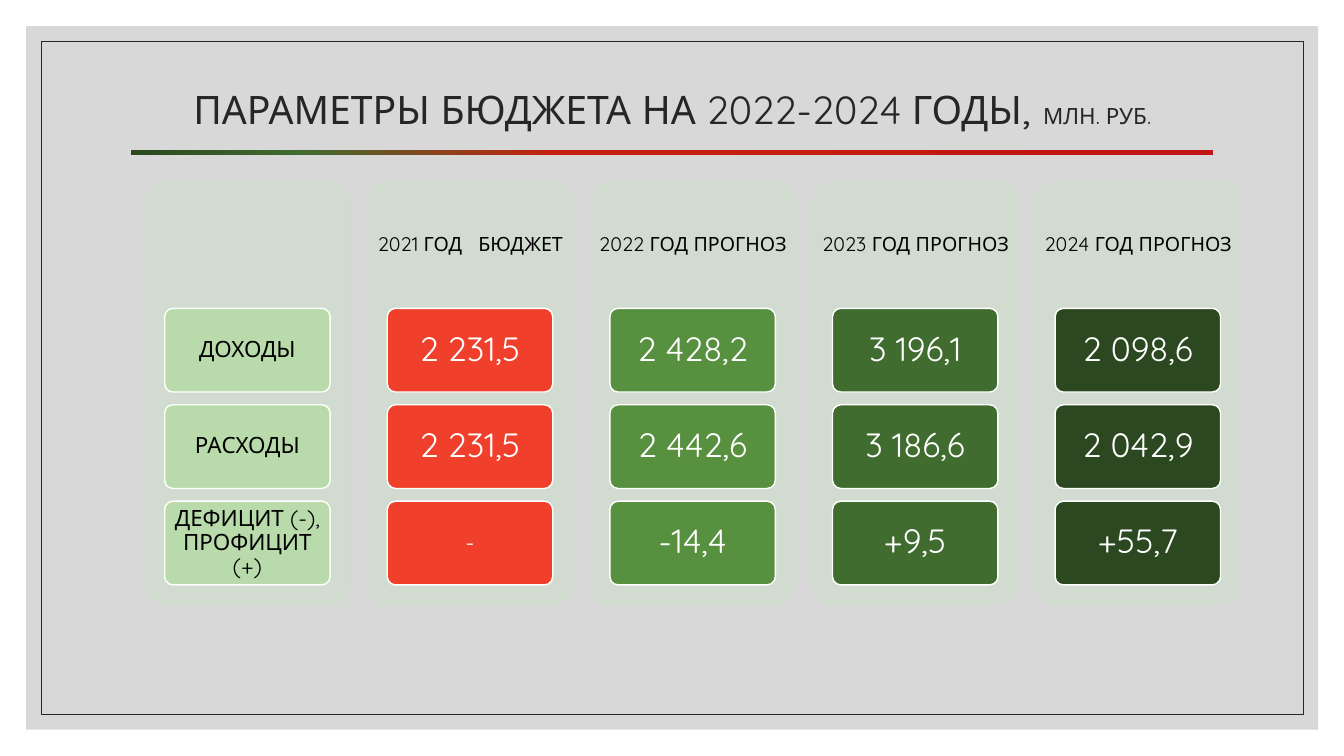
from lxml import etree
from pptx import Presentation
from pptx import util as u
from pptx.dml.color import RGBColor
from pptx.enum import shapes, text
from pptx.oxml import parse_xml
from pptx.oxml.ns import nsdecls, qn

FONT = "Quicksand"
WHITE = RGBColor(0xFF, 0xFF, 0xFF)
BLACK = RGBColor(0, 0, 0)
DARK = RGBColor(0x26, 0x26, 0x26)
GREY = RGBColor(0xBF, 0xBF, 0xBF)
PANEL = RGBColor(0xD1, 0xDB, 0xCF)
MINT = RGBColor(0xB9, 0xDA, 0xAB)
RED = RGBColor(0xF0, 0x3F, 0x2B)
GREEN = RGBColor(0x57, 0x90, 0x3F)
FOREST = RGBColor(0x41, 0x6C, 0x2F)
PINE = RGBColor(0x2C, 0x48, 0x20)
SCARLET = RGBColor(0xC6, 0x21, 0x0E)
CRIMSON = RGBColor(0xC2, 0x14, 0x14)

# Column header, card colour, text colour, card texts
COLUMNS = [
    ("", MINT, BLACK, ["ДОХОДЫ", "РАСХОДЫ", "ДЕФИЦИТ (-), ПРОФИЦИТ (+)"]),
    ("2021 ГОД   БЮДЖЕТ", RED, WHITE, ["2 231,5", "2 231,5", "-"]),
    ("2022 ГОД ПРОГНОЗ", GREEN, WHITE, ["2 428,2", "2 442,6", "-14,4"]),
    ("2023 ГОД ПРОГНОЗ", FOREST, WHITE, ["3 196,1", "3 186,6", "+9,5"]),
    ("2024 ГОД ПРОГНОЗ", PINE, WHITE, ["2 098,6", "2 042,9", "+55,7"]),
]
LEFT, TOP, COL_STEP, COL_W, COL_H = 3.63, 4.57, 5.61, 5.23, 10.69
HEADER_H, CARD_INDENT, CARD_W, CARD_H, CARD_STEP = 3.2, 0.52, 4.17, 2.11, 2.43


def add_run(p, content, size=16, color=BLACK):
    r = p.add_run()
    r.text = content
    r.font.name, r.font.size = FONT, u.Pt(size)
    r.font.color.rgb = color


def centred(tf, inset=0.1):
    """Prepare a text frame and return its first paragraph."""
    tf.word_wrap = True
    tf.auto_size = text.MSO_AUTO_SIZE.NONE
    tf.vertical_anchor = text.MSO_ANCHOR.MIDDLE
    tf.margin_left = tf.margin_right = u.Cm(inset)
    tf.margin_top = tf.margin_bottom = u.Cm(inset)
    p = tf.paragraphs[0]
    p.alignment = text.PP_ALIGN.CENTER
    p.line_spacing = 0.9
    return p


class BudgetSlide:
    def __init__(self, prs):
        self.s = prs.slides.add_slide(prs.slide_layouts[5])

    def shape(self, kind, box, fill=None, line=None, width=1):
        sp = self.s.shapes.add_shape(kind, *map(u.Cm, box))
        sp.shadow.inherit = False
        if fill is None:
            sp.fill.background()
        else:
            sp.fill.solid()
            sp.fill.fore_color.rgb = fill
        if line is None:
            sp.line.fill.background()
        else:
            sp.line.color.rgb = line
            sp.line.width = u.Pt(width)
        return sp

    def rect(self, box, **style):
        return self.shape(shapes.MSO_SHAPE.RECTANGLE, box, **style)

    def rounded(self, box, **style):
        sp = self.shape(shapes.MSO_SHAPE.ROUNDED_RECTANGLE, box, **style)
        sp.adjustments[0] = 0.1
        return sp

    def frame(self):
        panel = self.rect((0.66, 0.66, 32.56, 17.73), fill=GREY)
        color = panel.fill._xPr.find(".//" + qn("a:srgbClr"))
        etree.SubElement(color, qn("a:alpha")).set("val", "60000")
        self.rect((1.04, 1.04, 31.8, 16.97), line=DARK, width=0.5)

    def title(self, parts):
        sp = self.s.shapes.title
        sp.left, sp.top, sp.width, sp.height = map(u.Cm, (2.97, 1.75, 27.94, 2.03))
        # Bring the title in front of the frame
        sp.element.getparent().append(sp.element)
        p = centred(sp.text_frame)
        for content, size in parts:
            add_run(p, content, size=size, color=DARK)

    def gradient_bar(self, box, stops):
        sp = self.rect(box, fill=PINE)
        marks = "".join(
            f'<a:gs pos="{pos * 1000}"><a:srgbClr val="{color}"/></a:gs>'
            for pos, color in stops)
        solid = sp.element.spPr.find(qn("a:solidFill"))
        solid.getparent().replace(solid, parse_xml(
            f'<a:gradFill {nsdecls("a")}><a:gsLst>{marks}</a:gsLst>'
            '<a:lin ang="0" scaled="0"/></a:gradFill>'))

    def header(self, box, content):
        sp = self.s.shapes.add_textbox(*map(u.Cm, box))
        add_run(centred(sp.text_frame, inset=0.15), content, size=14)

    def card(self, box, content, fill, color):
        sp = self.rounded(box, fill=fill, line=WHITE)
        is_value = any(ch.isdigit() for ch in content)
        add_run(centred(sp.text_frame, inset=0.14), content,
                size=24 if is_value else 16, color=color)

    def column(self, left, header, fill, color, values):
        self.rounded((left, TOP, COL_W, COL_H), fill=PANEL)
        if header:
            self.header((left, TOP, COL_W, HEADER_H), header)
        for row, value in enumerate(values):
            top = TOP + HEADER_H + row * CARD_STEP
            self.card((left + CARD_INDENT, top, CARD_W, CARD_H), value, fill, color)


def main():
    prs = Presentation()
    prs.slide_width, prs.slide_height = u.Cm(33.87), u.Cm(19.05)
    budget = BudgetSlide(prs)

    # Frame, title and rule
    budget.frame()
    budget.title([("ПАРАМЕТРЫ БЮДЖЕТА НА 2022-2024 ГОДЫ", 28), (", ", 32),
                  ("МЛН. РУБ.", 16)])
    budget.gradient_bar((3.3, 3.79, 27.28, 0.13),
                        [(0, PINE), (16, FOREST), (39, SCARLET), (100, CRIMSON)])

    # Budget columns
    for i, column in enumerate(COLUMNS):
        budget.column(LEFT + i * COL_STEP, *column)

    prs.save("out.pptx")


if __name__ == "__main__":
    main()
